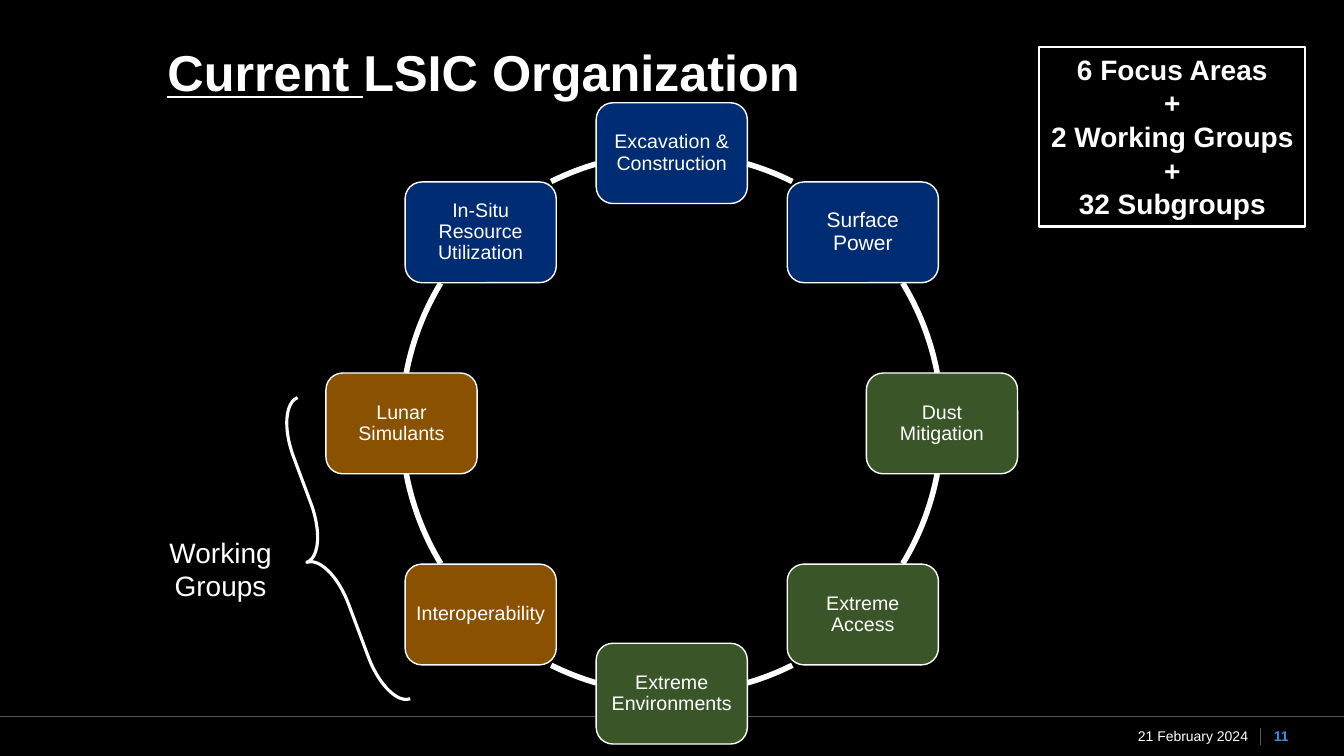
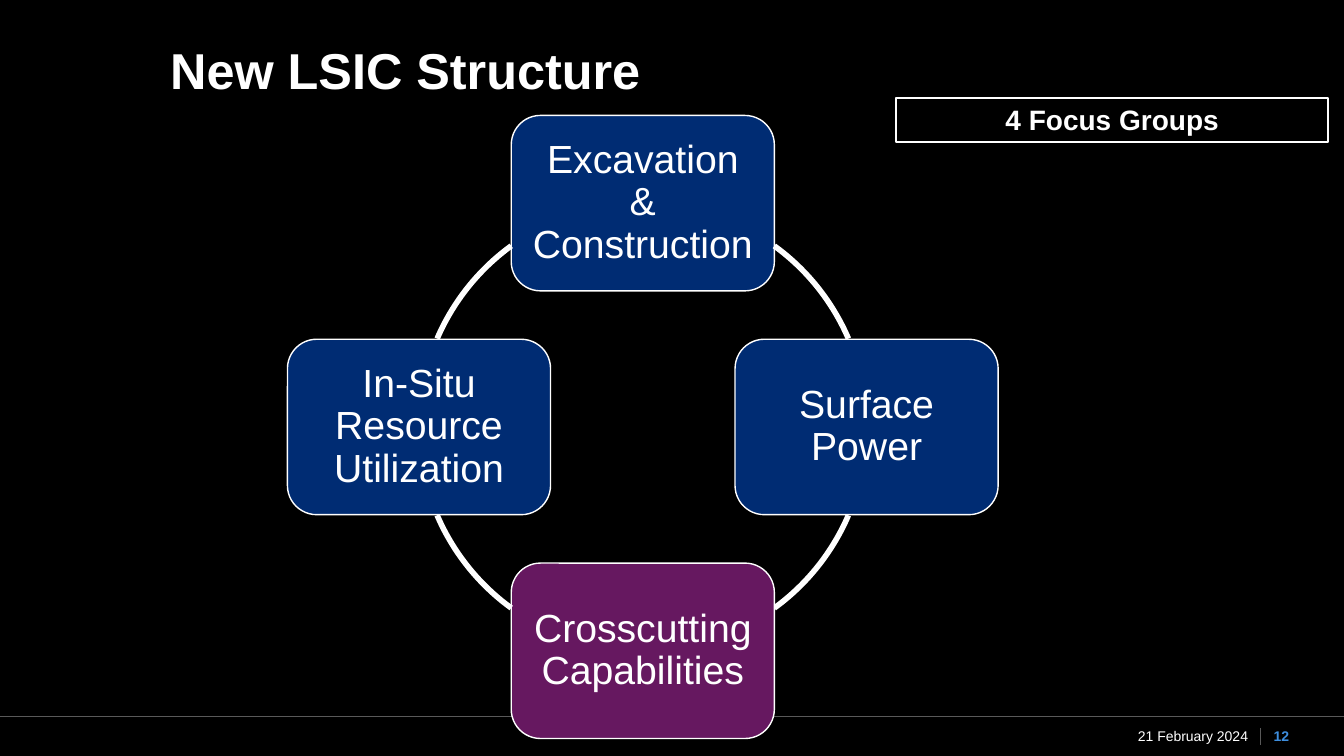
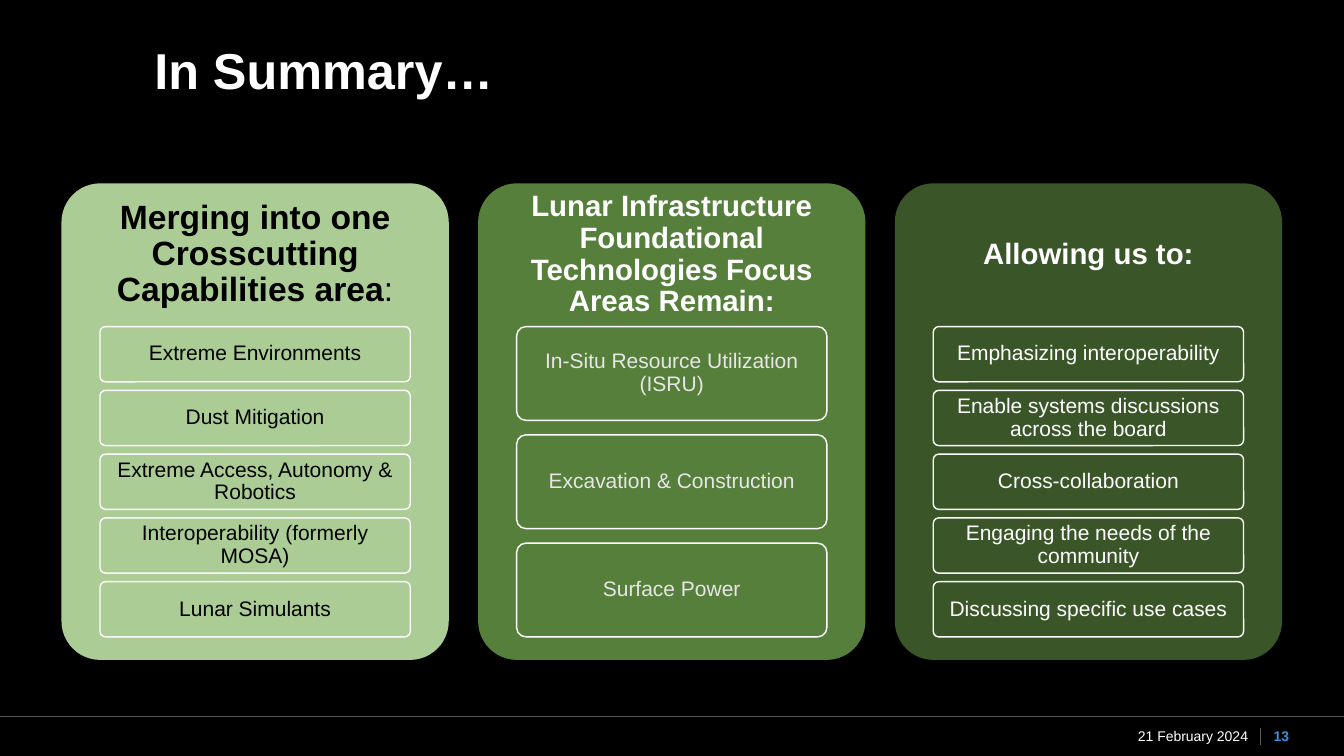
import math

from lxml import etree
from pptx import Presentation
from pptx.dml.color import RGBColor
from pptx.enum.shapes import MSO_CONNECTOR, MSO_SHAPE
from pptx.enum.text import MSO_ANCHOR, PP_ALIGN
from pptx.oxml.ns import qn
from pptx.util import Cm, Pt

LEFT, CENTER, RIGHT = PP_ALIGN.LEFT, PP_ALIGN.CENTER, PP_ALIGN.RIGHT
TOP, MIDDLE = MSO_ANCHOR.TOP, MSO_ANCHOR.MIDDLE
STRAIGHT = MSO_CONNECTOR.STRAIGHT
RECT, ROUNDED = MSO_SHAPE.RECTANGLE, MSO_SHAPE.ROUNDED_RECTANGLE
ARC, BRACE = MSO_SHAPE.ARC, MSO_SHAPE.LEFT_BRACE

FONT = "Arial"
COLORS = {
    "black": "000000",
    "white": "FFFFFF",
    "rule": "595959",
    "page": "3E8EDE",
    "blue": "002C73",
    "brown": "8A5100",
    "purple": "661860",
    "pale_green": "ABCD95",
    "green": "577F3C",
    "dark_green": "3A5528",
    "pale_gray": "E7E6E6",
}
SLIDE_W, SLIDE_H = 33.87, 19.05
FOOTER_TOP = 18.06
DATE = "21 February 2024"

CARD_LEFT, CARD_TOP, CARD_W, CARD_H, CARD_PITCH = 1.55, 4.62, 9.76, 12.01, 10.5
ITEMS_TOP, ITEMS_H, ITEM_W = 8.23, 7.82, 7.82
HEADER_H = 3.6
ITEM_GAP_RATIO = 0.154


def rgb(name):
    return RGBColor.from_string(COLORS[name])


def write(sp, lines, size, color="white", bold=False, align=CENTER,
          anchor=MIDDLE, inset=(0, 0), spacing=None):
    """Fill a shape with paragraphs; a line is a string or a tuple of runs."""
    tf = sp.text_frame
    tf.word_wrap = True
    tf.vertical_anchor = anchor
    tf.margin_left = tf.margin_right = Cm(inset[0])
    tf.margin_top = tf.margin_bottom = Cm(inset[1])
    for i, line in enumerate(lines):
        p = tf.paragraphs[0] if i == 0 else tf.add_paragraph()
        for text in (line,) if isinstance(line, str) else line:
            p.add_run().text = text
        p.alignment = align
        if spacing:
            p.line_spacing = spacing
        p.font.name = FONT
        p.font.size = Pt(size)
        p.font.bold = bold
        p.font.color.rgb = rgb(color)
    return tf


def add_text(slide, box, lines, size, **style):
    sp = slide.shapes.add_textbox(*map(Cm, box))
    return write(sp, lines, size, **style)


def add_shape(slide, kind, box, fill=None, line=None, width=1, adjust=()):
    sp = slide.shapes.add_shape(kind, *map(Cm, box))
    sp.shadow.inherit = False
    for i, value in enumerate(adjust):
        sp.adjustments[i] = value
    if fill:
        sp.fill.solid()
        sp.fill.fore_color.rgb = rgb(fill)
    else:
        sp.fill.background()
    if line:
        sp.line.color.rgb = rgb(line)
        sp.line.width = Pt(width)
    else:
        sp.line.fill.background()
    return sp


def add_rule(slide, x1, y1, x2, y2):
    line = slide.shapes.add_connector(STRAIGHT, Cm(x1), Cm(y1), Cm(x2), Cm(y2))
    line.line.color.rgb = rgb("rule")
    line.line.width = Pt(0.5)
    etree.SubElement(line._element.spPr, qn("a:effectLst"))


def add_slide(prs, number, title, box):
    """Add a black slide with its title and footer."""
    slide = prs.slides.add_slide(prs.slide_layouts[6])
    slide.background.fill.solid()
    slide.background.fill.fore_color.rgb = rgb("black")
    add_rule(slide, 0, FOOTER_TOP, SLIDE_W, FOOTER_TOP)
    add_rule(slide, 31.75, 18.34, 31.75, 18.77)
    add_text(slide, (27.89, FOOTER_TOP, 3.81, 0.99), [DATE], 10,
             align=RIGHT, inset=(0.25, 0))
    add_text(slide, (31.78, FOOTER_TOP, 1.02, 0.99), [str(number)], 10,
             color="page", bold=True)
    tf = add_text(slide, box, [title], 36, bold=True, align=LEFT, spacing=0.9)
    return slide, tf


def add_callout(slide, box, lines):
    sp = add_shape(slide, RECT, box, "black", "white", 1.5)
    write(sp, lines, 20, bold=True, anchor=TOP, inset=(0.25, 0.13))


def hidden_angle(degrees, radius, node_w, node_h, step):
    """Walk round the ring from a node's centre to the angle where it leaves the node."""
    def point(a):
        return radius * math.cos(math.radians(a)), radius * math.sin(math.radians(a))

    x0, y0 = point(degrees)
    angle = degrees
    x, y = x0, y0
    while abs(x - x0) <= node_w / 2 and abs(y - y0) <= node_h / 2:
        angle += step
        x, y = point(angle)
    return angle


def add_cycle(slide, center, radius, node_size, inset, nodes):
    """Set (text, fill, size) nodes clockwise from the top, joined by arcs."""
    cx, cy = center
    w, h = node_size
    ring = (cx - radius, cy - radius, 2 * radius, 2 * radius)
    turn = 360 / len(nodes)
    for i, (text, fill, size) in enumerate(nodes):
        angle = i * turn - 90
        x = cx + radius * math.cos(math.radians(angle))
        y = cy + radius * math.sin(math.radians(angle))
        sp = add_shape(slide, ROUNDED, (x - w / 2, y - h / 2, w, h), fill, "white")
        write(sp, [text], size, inset=(inset, inset), spacing=0.9)
        start = hidden_angle(angle, radius, w, h, 0.25)
        end = hidden_angle(angle + turn, radius, w, h, -0.25)
        # Arc adjustments are 60000ths of a degree, given here per 100000
        add_shape(slide, ARC, ring, line="white", width=4,
                  adjust=[a % 360 * 0.6 for a in (start, end)])


def add_card(slide, column, fill, header, header_size, items, color, item_color):
    left = CARD_LEFT + column * CARD_PITCH
    add_shape(slide, ROUNDED, (left, CARD_TOP, CARD_W, CARD_H), fill, adjust=[0.1])
    tf = add_text(slide, (left, CARD_TOP, CARD_W, HEADER_H), [header], header_size,
                  color=color, bold=True, inset=(0.24, 0.24), spacing=0.9)
    item_h = ITEMS_H / (len(items) + (len(items) - 1) * ITEM_GAP_RATIO)
    item_left = left + (CARD_W - ITEM_W) / 2
    for i, item in enumerate(items):
        top = ITEMS_TOP + i * item_h * (1 + ITEM_GAP_RATIO)
        sp = add_shape(slide, ROUNDED, (item_left, top, ITEM_W, item_h),
                       fill, "white", adjust=[0.1])
        write(sp, [item], 15, color=item_color, inset=(0.1, 0.08), spacing=0.9)
    return tf


def current_organization(prs):
    slide, title = add_slide(prs, 11, ("Current ", "LSIC Organization"),
                             (4.22, 0.84, 21.03, 2.11))
    title.paragraphs[0].runs[0].font.underline = True
    add_cycle(slide, (16.93, 10.67), 6.81, (3.81, 2.54), 0.15, [
        ("Excavation & Construction", "blue", 14),
        ("Surface Power", "blue", 15),
        ("Dust Mitigation", "dark_green", 14),
        ("Extreme Access", "dark_green", 14),
        ("Extreme Environments", "dark_green", 14),
        ("Interoperability", "brown", 14),
        ("Lunar Simulants", "brown", 14),
        ("In-Situ Resource Utilization", "blue", 14),
    ])
    brace = add_shape(slide, BRACE, (7.72, 9.98, 1.24, 8.1), line="white",
                      width=2.25, adjust=[1.1, 0.49])
    brace.rotation = 339.5
    add_text(slide, (3.2, 13.36, 4.72, 1.96), ["Working Groups"], 20,
             anchor=TOP, inset=(0.25, 0.13))
    add_callout(slide, (26.19, 1.19, 6.71, 4.52),
                ["6 Focus Areas", "+", "2 Working Groups", "+", "32 Subgroups"])


def new_structure(prs):
    slide, _ = add_slide(prs, 12, "New LSIC Structure", (4.29, 0.79, 28.22, 2.11))
    add_cycle(slide, (16.2, 10.76), 5.64, (6.63, 4.42), 0.3, [
        ("Excavation & Construction", "blue", 28),
        ("Surface Power", "blue", 28),
        ("Crosscutting Capabilities", "purple", 28),
        ("In-Situ Resource Utilization", "blue", 28),
    ])
    add_callout(slide, (22.58, 2.46, 10.9, 1.12), ["4 Focus Groups"])


def summary(prs):
    slide, _ = add_slide(prs, 13, "In Summary…", (3.89, 0.79, 28.7, 2.11))
    header = add_card(
        slide, 0, "pale_green",
        ("Merging into one Crosscutting Capabilities area", ":"), 24,
        ["Extreme Environments", "Dust Mitigation",
         "Extreme Access, Autonomy & Robotics",
         "Interoperability (formerly MOSA)", "Lunar Simulants"],
        "black", "black")
    header.paragraphs[0].runs[1].font.bold = False
    add_card(
        slide, 1, "green",
        "Lunar Infrastructure Foundational Technologies Focus Areas Remain:", 21,
        ["In-Situ Resource Utilization (ISRU)", "Excavation & Construction",
         "Surface Power"],
        "white", "pale_gray")
    add_card(
        slide, 2, "dark_green", "Allowing us to:", 21,
        ["Emphasizing interoperability",
         "Enable systems discussions across the board", "Cross-collaboration",
         "Engaging the needs of the community", "Discussing specific use cases"],
        "white", "white")


def main():
    prs = Presentation()
    prs.slide_width, prs.slide_height = Cm(SLIDE_W), Cm(SLIDE_H)
    current_organization(prs)
    new_structure(prs)
    summary(prs)
    prs.save("out.pptx")


if __name__ == "__main__":
    main()
